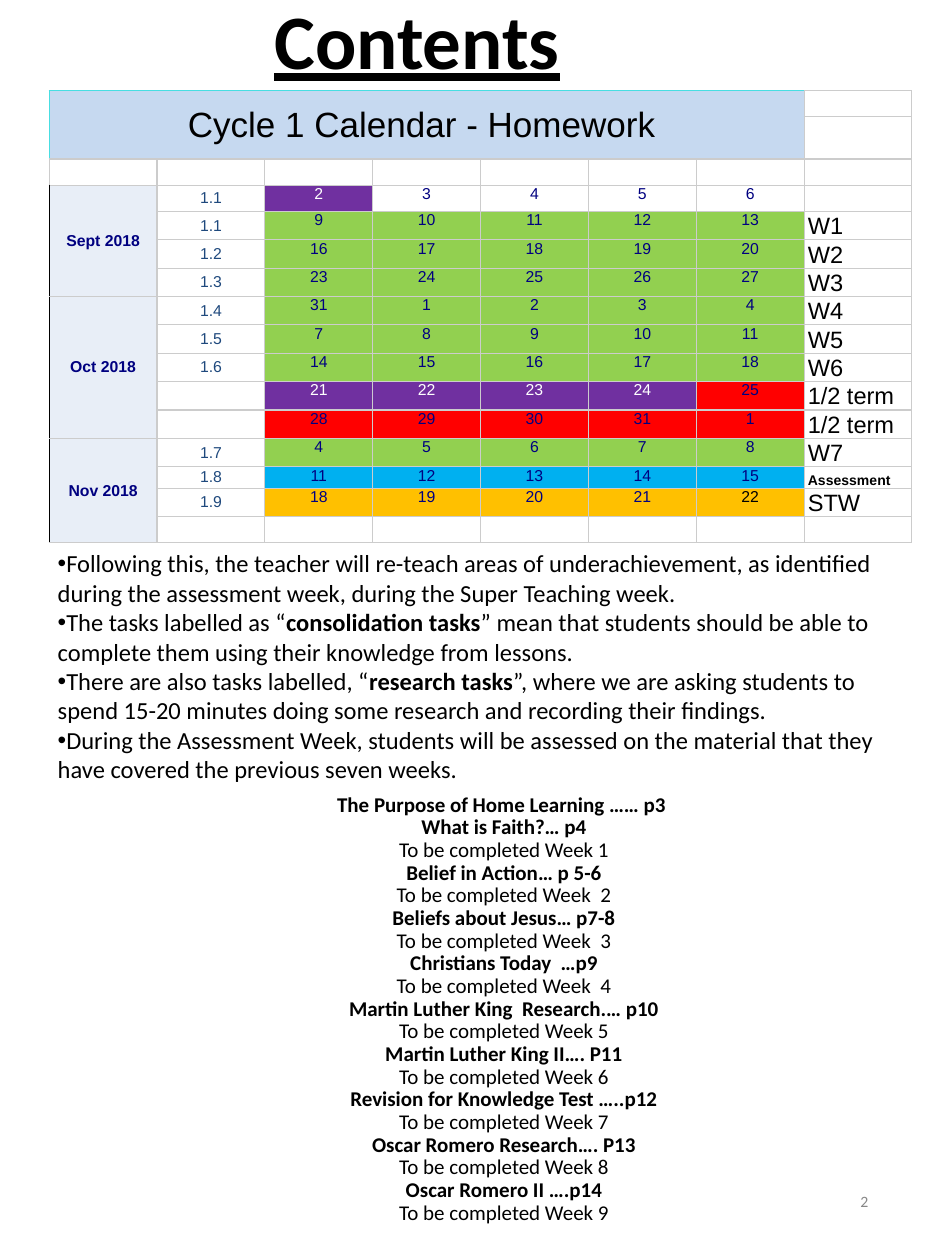
from typing import NamedTuple

from lxml.etree import SubElement
from pptx import Presentation
from pptx.dml.color import RGBColor
from pptx.enum.text import MSO_ANCHOR, MSO_AUTO_SIZE, PP_ALIGN
from pptx.oxml.ns import qn
from pptx.util import Inches, Pt

COLORS = {
    "black": "000000", "white": "FFFFFF", "grey": "888888", "line": "CCCCCC",
    "cyan": "48DEE2", "header": "C6D9F0", "month": "E8EEF7", "navy": "000080",
    "blue": "1F497D", "purple": "7030A0", "green": "92D050", "red": "FF0000",
    "sky": "00B0F0", "amber": "FFC000",
}
# Day code: (fill, text colour)
DAY_STYLES = {
    "-": (None, "navy"), "P": ("purple", "white"), "G": ("green", "navy"),
    "R": ("red", "navy"), "S": ("sky", "navy"), "A": ("amber", "navy"),
    "B": ("amber", "black"),
}


class Week(NamedTuple):
    number: str
    days: str
    codes: str
    note: str


class Month(NamedTuple):
    name: str
    row: int
    span: int


class Entry(NamedTuple):
    heading: str
    week: str


WEEKS = [
    Week("1.1", "2 3 4 5 6", "P----", ""),
    Week("1.1", "9 10 11 12 13", "GGGGG", "W1"),
    Week("1.2", "16 17 18 19 20", "GGGGG", "W2"),
    Week("1.3", "23 24 25 26 27", "GGGGG", "W3"),
    Week("1.4", "31 1 2 3 4", "GGGGG", "W4"),
    Week("1.5", "7 8 9 10 11", "GGGGG", "W5"),
    Week("1.6", "14 15 16 17 18", "GGGGG", "W6"),
    Week("", "21 22 23 24 25", "PPPPR", "1/2 term"),
    Week("", "28 29 30 31 1", "RRRRR", "1/2 term"),
    Week("1.7", "4 5 6 7 8", "GGGGG", "W7"),
    Week("1.8", "11 12 13 14 15", "SSSSS", "Assessment"),
    Week("1.9", "18 19 20 21 22", "AAAAB", "STW"),
]
MONTHS = [Month("Sept 2018", 3, 4), Month("Oct 2018", 7, 5), Month("Nov 2018", 12, 4)]
ENTRIES = [
    Entry("What is Faith?… p4", "Week 1"),
    Entry("Belief in Action… p 5-6", "Week  2"),
    Entry("Beliefs about Jesus… p7-8", "Week  3"),
    Entry("Christians Today  …p9", "Week  4"),
    Entry("Martin Luther King  Research.… p10", "Week 5"),
    Entry("Martin Luther King II…. P11", "Week 6"),
    Entry("Revision for Knowledge Test …..p12", "Week 7"),
    Entry("Oscar Romero Research…. P13", "Week 8"),
    Entry("Oscar Romero II ….p14", "Week 9"),
]
# Each bullet alternates plain and bold text
BULLETS = [
    ["Following this, the teacher will re-teach areas of underachievement, as identified "
     "during the assessment week, during the Super Teaching week."],
    ["The tasks labelled as “", "consolidation tasks",
     "” mean that students should be able to complete them using their knowledge from lessons."],
    ["There are also tasks labelled, “", "research tasks",
     "”, where we are asking students to spend 15-20 minutes doing some research and "
     "recording their findings."],
    ["During the Assessment Week, students will be assessed on the material that they "
     "have covered the previous seven weeks."],
]
ROWS, COLS, FIRST_WEEK_ROW = 16, 8, 3


def rgb(name: str) -> RGBColor:
    return RGBColor.from_string(COLORS[name])


def add_run(p, text: str, *, size: float, color: str = "black", bold: bool = False,
            underline: bool = False, font: str = "Calibri") -> None:
    r = p.add_run()
    r.text = text
    f = r.font
    f.name, f.size, f.bold, f.underline = font, Pt(size), bold, underline
    f.color.rgb = rgb(color)


def add_box(s, left: float, top: float, width: float, height: float, anchor=MSO_ANCHOR.TOP):
    tf = s.shapes.add_textbox(Inches(left), Inches(top), Inches(width), Inches(height)).text_frame
    tf.word_wrap = True
    tf.vertical_anchor = anchor
    return tf


def fill_cell(cell, text: str, *, fill: str | None = None, align=PP_ALIGN.CENTER,
              anchor=MSO_ANCHOR.MIDDLE, size: float = 9, **style) -> None:
    if fill:
        cell.fill.solid()
        cell.fill.fore_color.rgb = rgb(fill)
    cell.vertical_anchor = anchor
    p = cell.text_frame.paragraphs[0]
    p.alignment = align
    if text:
        add_run(p, text, size=size, font="Arial", **style)


def prepare_cell(cell, row: int, col: int) -> None:
    """Set margins, borders, no fill, and a small font so empty rows keep their height."""
    cell.margin_left = cell.margin_right = Inches(0.03)
    cell.margin_top = cell.margin_bottom = 0
    borders = dict.fromkeys(("lnL", "lnR", "lnT", "lnB"), "line")
    if col == 0 and row != 2:
        borders["lnL"] = "cyan" if row < 2 else "black"
    if row == 0 and col < COLS - 1:
        borders["lnT"] = "cyan"
    if row == ROWS - 1 and col == 0:
        borders["lnB"] = "black"
    tc_pr = cell._tc.get_or_add_tcPr()
    for tag, color in borders.items():
        ln = SubElement(tc_pr, qn(f"a:{tag}"), w=str(Pt(0.75)))
        SubElement(SubElement(ln, qn("a:solidFill")), qn("a:srgbClr"), val=COLORS[color])
    cell.fill.background()
    SubElement(cell.text_frame.paragraphs[0]._p, qn("a:endParaRPr"), sz="900")


def add_calendar(s) -> None:
    table = s.shapes.add_table(ROWS, COLS, Inches(0.39), Inches(0.72),
                               Inches(6.85), Inches(3.4)).table
    table.first_row = table.horz_banding = False
    for column in table.columns:
        column.width = Inches(6.85 / COLS)
    for i, row in enumerate(table.rows):
        row.height = Inches({1: 0.31, 13: 0.17}.get(i, 0.208))
        for j, cell in enumerate(row.cells):
            prepare_cell(cell, i, j)

    table.cell(0, 0).merge(table.cell(1, COLS - 2))
    fill_cell(table.cell(0, 0), "Cycle 1 Calendar - Homework ", fill="header", size=20)
    for m in MONTHS:
        table.cell(m.row, 0).merge(table.cell(m.row + m.span - 1, 0))
        fill_cell(table.cell(m.row, 0), m.name, fill="month", color="navy", bold=True)
    for i, week in enumerate(WEEKS, FIRST_WEEK_ROW):
        fill_cell(table.cell(i, 1), week.number, color="blue")
        for j, (day, code) in enumerate(zip(week.days.split(), week.codes), 2):
            fill, ink = DAY_STYLES[code]
            fill_cell(table.cell(i, j), day, fill=fill, color=ink, anchor=MSO_ANCHOR.TOP)
        small = week.note == "Assessment"
        fill_cell(table.cell(i, 7), week.note, size=8 if small else 13.5, bold=small,
                  align=PP_ALIGN.LEFT, anchor=MSO_ANCHOR.BOTTOM)


def add_contents_list(s) -> None:
    title = s.shapes.title
    title.left, title.top, title.width, title.height = (Inches(v) for v in (0, 6.89, 8, 2.6))
    tf = title.text_frame
    tf.auto_size = MSO_AUTO_SIZE.NONE
    tf.word_wrap = True
    tf.vertical_anchor = MSO_ANCHOR.MIDDLE
    tf.margin_bottom = Inches(0.41)
    p = tf.paragraphs[0]
    p.alignment = PP_ALIGN.CENTER
    p.line_spacing = 0.9
    add_run(p, "The Purpose of Home Learning …… p3 ", size=12, bold=True)
    for entry in ENTRIES:
        p.add_line_break()
        add_run(p, entry.heading, size=12, bold=True)
        p.add_line_break()
        add_run(p, f"To be completed {entry.week}", size=12)


def add_bullets(s) -> None:
    tf = add_box(s, 0.36, 4.29, 6.85, 1.99, MSO_ANCHOR.MIDDLE)
    for i, parts in enumerate(BULLETS):
        p = tf.add_paragraph() if i else tf.paragraphs[0]
        p_pr = p._p.get_or_add_pPr()
        p_pr.set("marL", "0")
        p_pr.set("indent", str(-Inches(0.1)))
        SubElement(SubElement(p_pr, qn("a:buClr")), qn("a:srgbClr"), val=COLORS["black"])
        SubElement(p_pr, qn("a:buFont"), typeface="Arial")
        SubElement(p_pr, qn("a:buChar"), char="•")
        for j, text in enumerate(parts):
            add_run(p, text, size=14, bold=j % 2 == 1)


def main() -> None:
    prs = Presentation()
    prs.slide_width, prs.slide_height = Inches(7.5), Inches(10)
    s = prs.slides.add_slide(prs.slide_layouts[5])
    add_contents_list(s)
    add_run(add_box(s, 2.08, -0.11, 2.49, 0.84).paragraphs[0], "Contents",
            size=44, bold=True, underline=True)
    p = add_box(s, 5.3, 9.27, 1.69, 0.53, MSO_ANCHOR.MIDDLE).paragraphs[0]
    p.alignment = PP_ALIGN.RIGHT
    add_run(p, "2", size=9, color="grey")
    add_bullets(s)
    add_calendar(s)
    prs.save("out.pptx")


if __name__ == "__main__":
    main()
